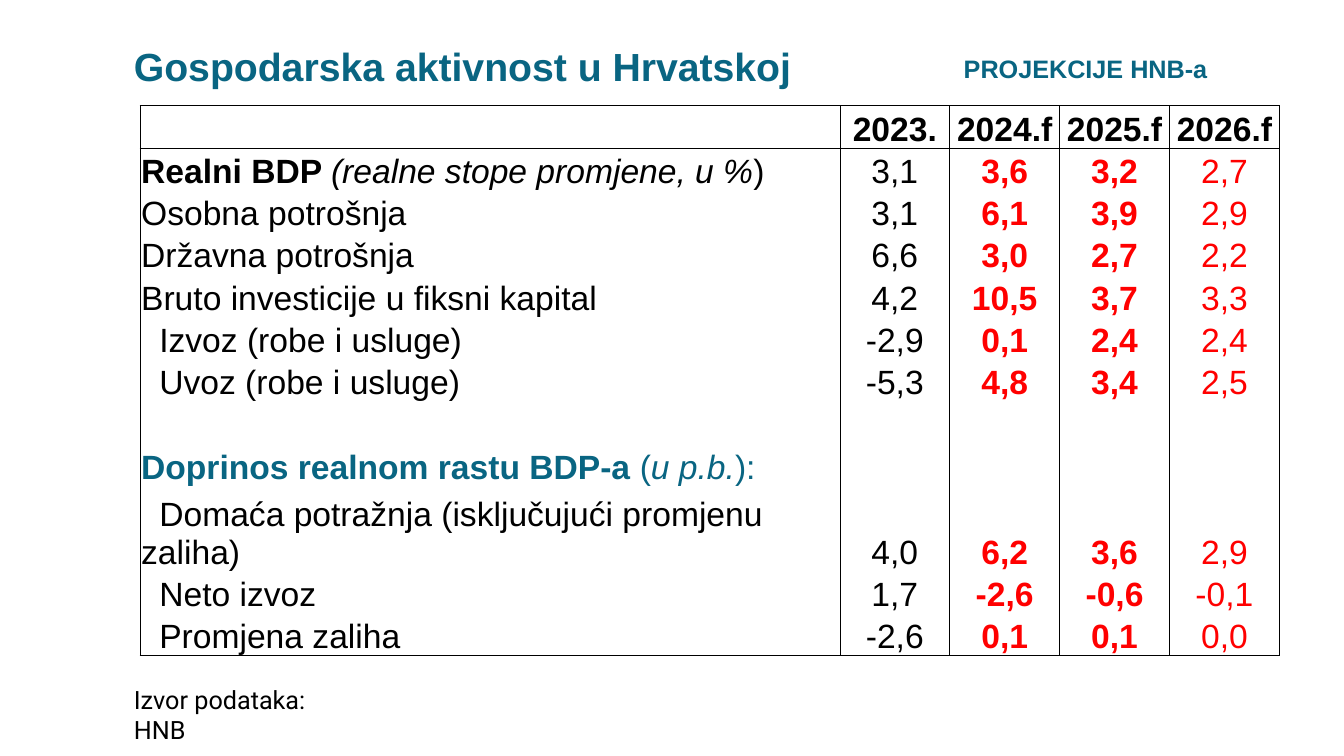
from lxml import etree
from pptx import Presentation
from pptx.dml.color import RGBColor
from pptx.enum.text import MSO_ANCHOR, PP_ALIGN
from pptx.oxml.ns import qn
from pptx.util import Inches, Pt

BOTTOM = MSO_ANCHOR.BOTTOM
LEFT, CENTER = PP_ALIGN.LEFT, PP_ALIGN.CENTER

BLACK = RGBColor(0x00, 0x00, 0x00)
WHITE = RGBColor(0xFF, 0xFF, 0xFF)
RED = RGBColor(0xFF, 0x00, 0x00)
TEAL = RGBColor(0x09, 0x65, 0x82)

LABEL_WIDTH, YEAR_WIDTH, ROW_HEIGHT = Inches(6.94), Inches(1.09), Inches(0.42)
INDENT = Inches(0.18)
THIN, THICK = Pt(0.5), Pt(1)

YEARS = ["2023.", "2024.f", "2025.f", "2026.f"]
YEAR_STYLES = [(BLACK, False), (RED, True), (RED, True), (RED, False)]

# Each row: height in grid rows, indented, label runs (text, bold, italic), values
ROWS = [
    (1, False, [("Realni BDP ", True, False), ("(realne stope promjene, u %", False, True),
                (")", False, False)], ["3,1", "3,6", "3,2", "2,7"]),
    (1, False, [("Osobna potrošnja", False, False)], ["3,1", "6,1", "3,9", "2,9"]),
    (1, False, [("Državna potrošnja", False, False)], ["6,6", "3,0", "2,7", "2,2"]),
    (1, False, [("Bruto investicije u fiksni kapital", False, False)], ["4,2", "10,5", "3,7", "3,3"]),
    (1, True, [("Izvoz (robe i usluge)", False, False)], ["-2,9", "0,1", "2,4", "2,4"]),
    (1, True, [("Uvoz (robe i usluge)", False, False)], ["-5,3", "4,8", "3,4", "2,5"]),
    (2, False, [("Doprinos realnom rastu BDP-a ", True, False), ("(", False, False),
                ("u p.b.", False, True), ("):", False, False)], []),
    (2, True, [("Domaća potražnja (isključujući promjenu zaliha)", False, False)],
     ["4,0", "6,2", "3,6", "2,9"]),
    (1, True, [("Neto izvoz", False, False)], ["1,7", "-2,6", "-0,6", "-0,1"]),
    (1, True, [("Promjena zaliha", False, False)], ["-2,6", "0,1", "0,1", "0,0"]),
]


def add_run(paragraph, text, size, color, bold=False, italic=False, font="Arial"):
    run = paragraph.add_run()
    run.text = text
    run.font.name = font
    run.font.size = Pt(size)
    run.font.color.rgb = color
    run.font.bold = bold
    run.font.italic = italic


def set_borders(cell, widths):
    """Set left, right, top and bottom borders; a width of 0 means no line."""
    properties = cell._tc.get_or_add_tcPr()
    for position, (side, width) in enumerate(zip("LRTB", widths)):
        line = etree.Element(qn(f"a:ln{side}"), w=str(width))
        if width:
            fill = etree.SubElement(line, qn("a:solidFill"))
            etree.SubElement(fill, qn("a:srgbClr"), val=str(BLACK))
        else:
            etree.SubElement(line, qn("a:noFill"))
        properties.insert(position, line)


presentation = Presentation()
presentation.slide_width = Inches(13.33)
presentation.slide_height = Inches(7.5)
slide = presentation.slides.add_slide(presentation.slide_layouts[6])

# Title, projection label and data source
for left, top, width, height, text, size, color, bold, font in [
    (1.23, 0.37, 8.12, 0.57, "Gospodarska aktivnost u Hrvatskoj", 28, TEAL, True, "Arial"),
    (9.46, 0.48, 3.61, 0.4, "PROJEKCIJE HNB-a", 18, TEAL, True, "Arial"),
    (1.23, 6.74, 2.4, 0.4, "Izvor podataka: HNB", 18, BLACK, False, "Roboto"),
]:
    text_box = slide.shapes.add_textbox(Inches(left), Inches(top), Inches(width), Inches(height))
    text_box.text_frame.word_wrap = True
    add_run(text_box.text_frame.paragraphs[0], text, size, color, bold, font=font)

# Table structure
heights = [1] + [row[0] for row in ROWS]
last_row, last_column = len(ROWS), len(YEARS)
table = slide.shapes.add_table(
    last_row + 1, last_column + 1, Inches(1.39), Inches(1.05),
    LABEL_WIDTH + last_column * YEAR_WIDTH, sum(heights) * ROW_HEIGHT).table
table.first_row = False
table.horz_banding = False
for column_index, column in enumerate(table.columns):
    column.width = YEAR_WIDTH if column_index else LABEL_WIDTH
for row, units in zip(table.rows, heights):
    row.height = units * ROW_HEIGHT

for row_index in range(last_row + 1):
    for column_index in range(last_column + 1):
        cell = table.cell(row_index, column_index)
        cell.fill.solid()
        cell.fill.fore_color.rgb = WHITE
        cell.vertical_anchor = BOTTOM
        cell.margin_left = cell.margin_right = cell.margin_top = Inches(0.01)
        cell.margin_bottom = 0
        cell.text_frame.paragraphs[0].alignment = CENTER if column_index else LEFT
        set_borders(cell, [
            THIN if column_index else THICK,
            THICK if column_index == last_column else THIN,
            {0: THICK, 1: THIN}.get(row_index, 0),
            {0: THIN, last_row: THICK}.get(row_index, 0),
        ])

# Table content
for column_index, year in enumerate(YEARS, 1):
    add_run(table.cell(0, column_index).text_frame.paragraphs[0], year, 24, BLACK, True)

for row_index, (units, indented, label_runs, values) in enumerate(ROWS, 1):
    label = table.cell(row_index, 0).text_frame.paragraphs[0]
    if indented:
        label._p.get_or_add_pPr().set("indent", str(INDENT))
    for text, bold, italic in label_runs:
        add_run(label, text, 24, BLACK if values else TEAL, bold, italic)
    for column_index, (value, (color, bold)) in enumerate(zip(values, YEAR_STYLES), 1):
        add_run(table.cell(row_index, column_index).text_frame.paragraphs[0], value, 24, color, bold)

presentation.save("out.pptx")
